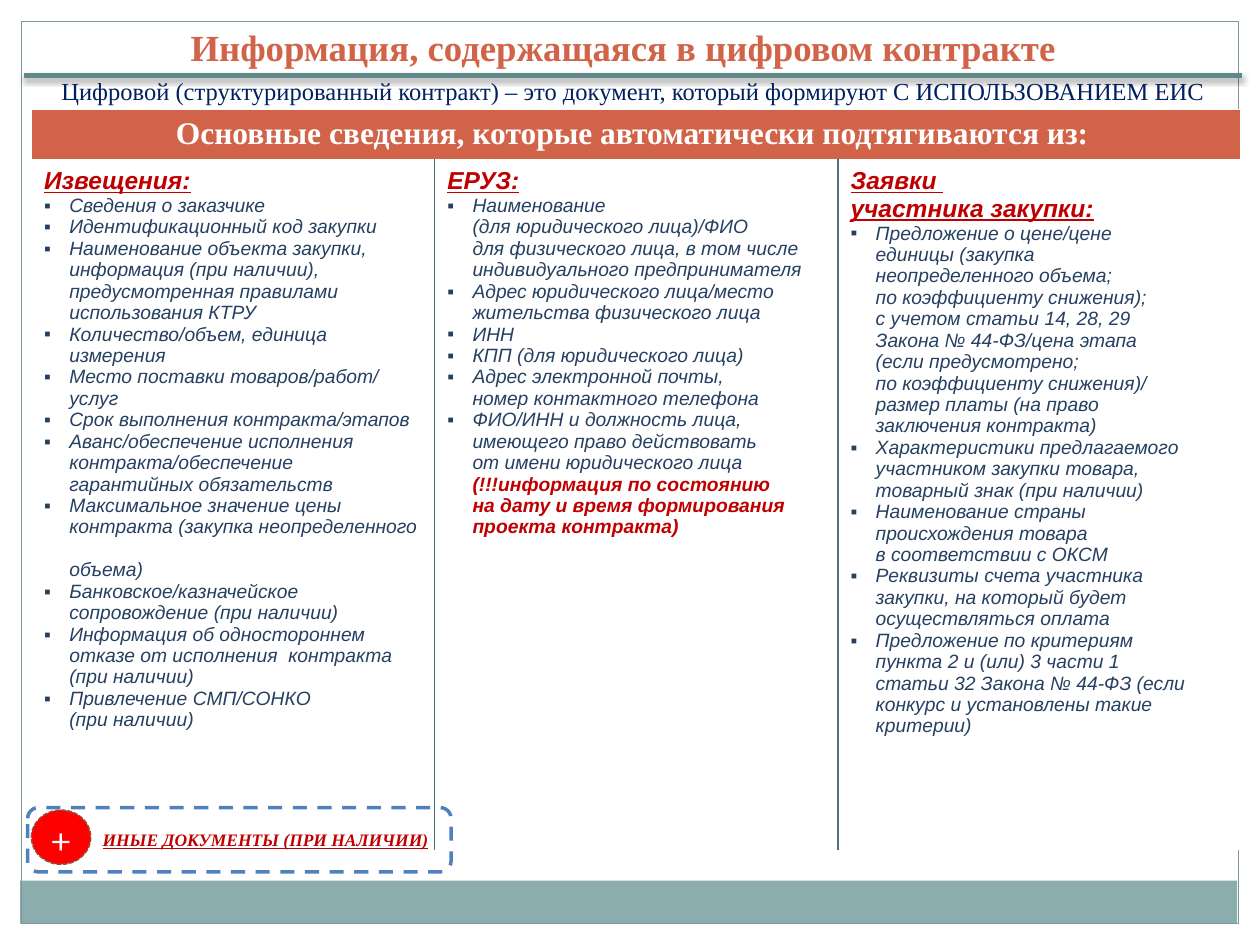
from copy import deepcopy
from lxml.etree import SubElement
from pptx import Presentation
from pptx.dml.color import RGBColor
from pptx.enum.dml import MSO_LINE
from pptx.enum.shapes import MSO_CONNECTOR, MSO_SHAPE
from pptx.enum.text import MSO_ANCHOR, PP_ALIGN
from pptx.oxml import parse_xml
from pptx.oxml.ns import nsdecls, qn
from pptx.util import Inches, Pt

THEME = {
    "white": "FFFFFF", "rust": "D16349", "sage": "8CADAE", "frame": "7C999A",
    "rule": "61898A", "grid": "546D7A", "red": "FF0000", "rim": "9B4936", "dash": "4F81BD",
    "title": ("D16349", {"name": "Times New Roman", "size": Pt(21), "bold": True}),
    "lead": ("002060", {"name": "Times New Roman", "size": Pt(14)}),
    "band": ("FFFFFF", {"name": "Times New Roman", "size": Pt(18), "bold": True}),
    "head": ("C00000", {"name": "Arial", "size": Pt(14), "bold": True, "italic": True, "underline": True}),
    "item": ("254061", {"name": "Arial", "size": Pt(11), "bold": False, "italic": True}),
    "alert": ("C00000", {"name": "Arial", "size": Pt(11), "bold": True, "italic": True}),
    "plus": ("FFFFFF", {"name": "Cambria", "size": Pt(24)}),
    "label": ("C00000", {"name": "Times New Roman", "size": Pt(10), "bold": True, "italic": True, "underline": True}),
}

COLUMNS = [
    ("Извещения:", [
        "Сведения о заказчике",
        "Идентификационный код закупки",
        "Наименование объекта закупки, \nинформация (при наличии), \nпредусмотренная правилами \nиспользования КТРУ",
        "Количество/объем, единица \nизмерения",
        "Место поставки товаров/работ/\nуслуг",
        "Срок выполнения контракта/этапов",
        "Аванс/обеспечение исполнения \nконтракта/обеспечение \nгарантийных обязательств",
        "Максимальное значение цены \nконтракта (закупка неопределенного \nобъема)",
        "Банковское/казначейское \nсопровождение (при наличии)",
        "Информация об одностороннем \nотказе от исполнения  контракта\n(при наличии)",
        "Привлечение СМП/СОНКО \n(при наличии)",
    ]),
    ("ЕРУЗ:", [
        "Наименование \n(для юридического лица)/ФИО \nдля физического лица, в том числе \nиндивидуального предпринимателя",
        "Адрес юридического лица/место \nжительства физического лица",
        "ИНН",
        "КПП (для юридического лица)",
        "Адрес электронной почты, \nномер контактного телефона",
        "ФИО/ИНН и должность лица, \nимеющего право действовать \nот имени юридического лица \n"
        "|(!!!информация по состоянию \nна дату и время формирования \nпроекта контракта)",
    ]),
    ("Заявки \nучастника закупки:", [
        "Предложение о цене/цене \nединицы (закупка \nнеопределенного объема; \nпо коэффициенту снижения); \n"
        "с учетом статьи 14, 28, 29 \nЗакона № 44-ФЗ/цена этапа\n(если предусмотрено; \n"
        "по коэффициенту снижения)/\nразмер платы (на право \nзаключения контракта)",
        "Характеристики предлагаемого \nучастником закупки товара, \nтоварный знак (при наличии)",
        "Наименование страны \nпроисхождения товара \nв соответствии с ОКСМ",
        "Реквизиты счета участника \nзакупки, на который будет \nосуществляться оплата",
        "Предложение по критериям \nпункта 2 и (или) 3 части 1 \nстатьи 32 Закона № 44-ФЗ (если \nконкурс и установлены такие \nкритерии)",
    ]),
]


def write(par, text, style):
    tone, form = THEME[style]
    for line in text.splitlines(keepends=True):
        run = par.add_run()
        run.text = line.rstrip("\n")
        for key, val in form.items():
            setattr(run.font, key, val)
        run.font.color.rgb = RGBColor.from_string(tone)
        if line.endswith("\n"):
            par.add_line_break()
            par._p[-1].append(deepcopy(run._r.rPr))


def draw(kind, box, fill=None, edge=None, width=1, dash=None):
    shape = slide.shapes.add_shape(kind, *map(Inches, box))
    shape.shadow.inherit = False
    if fill:
        shape.fill.solid()
        shape.fill.fore_color.rgb = RGBColor.from_string(THEME[fill])
    else:
        shape.fill.background()
    if edge:
        shape.line.color.rgb = RGBColor.from_string(THEME[edge])
        shape.line.width = Pt(width)
        shape.line.dash_style = dash
    else:
        shape.line.fill.background()
    return shape


deck = Presentation()
deck.slide_width, deck.slide_height = Inches(10), Inches(7.5)
slide = deck.slides.add_slide(deck.slide_layouts[6])

draw(MSO_SHAPE.RECTANGLE, (0.16, 6.99, 9.66, 0.34), "sage")
draw(MSO_SHAPE.RECTANGLE, (0.17, 0.17, 9.66, 7.16), None, "frame", 0.75)

rule = slide.shapes.add_connector(MSO_CONNECTOR.STRAIGHT, Inches(0.19), Inches(0.6), Inches(9.86), Inches(0.6))
rule.line.color.rgb = RGBColor.from_string(THEME["rule"])
rule.line.width = Pt(3)
rule._element.spPr.append(parse_xml(
    f'<a:effectLst {nsdecls("a")}><a:outerShdw blurRad="{Pt(3.1)}" dist="{Pt(1.6)}" dir="5400000" rotWithShape="0">'
    '<a:srgbClr val="000000"><a:alpha val="38000"/></a:srgbClr></a:outerShdw></a:effectLst>'))

texts = [
    ("title", (0.22, 0.13, 9.45, 0.47), MSO_ANCHOR.BOTTOM, 0.9, "Информация, содержащаяся в цифровом контракте"),
    ("lead", (0.25, 0.44, 9.55, 0.56), MSO_ANCHOR.MIDDLE, 1.0,
     "Цифровой (структурированный контракт) – это документ, который формируют С ИСПОЛЬЗОВАНИЕМ ЕИС"),
]
for style, box, anchor, space, text in texts:
    frame = slide.shapes.add_textbox(*map(Inches, box)).text_frame
    frame.word_wrap = True
    frame.vertical_anchor = anchor
    par = frame.paragraphs[0]
    par.alignment = PP_ALIGN.CENTER
    par.line_spacing = space
    write(par, text, style)

count = len(COLUMNS)
table = slide.shapes.add_table(2, count, Inches(0.25), Inches(0.87), Inches(9.6), Inches(5.87)).table
table.first_row = table.horz_banding = False
for row, high in zip(table.rows, (0.41, 5.46)):
    row.height = Inches(high)
table.cell(0, 0).merge(table.cell(0, count - 1))
par = table.cell(0, 0).text_frame.paragraphs[0]
par.alignment = PP_ALIGN.CENTER
write(par, "Основные сведения, которые автоматически подтягиваются из: ", "band")

for col, (head, items) in enumerate(COLUMNS):
    table.columns[col].width = Inches(3.2)
    frame = table.cell(1, col).text_frame
    write(frame.paragraphs[0], head, "head")
    for item in items:
        par = frame.add_paragraph()
        prop = par._p.get_or_add_pPr()
        prop.set("marL", str(Inches(0.2)))
        prop.set("indent", str(Inches(-0.2)))
        SubElement(prop, qn("a:buFont")).set("typeface", "Arial")
        SubElement(prop, qn("a:buChar")).set("char", "▪")
        plain, _, alert = item.partition("|")
        write(par, plain, "item")
        write(par, alert, "alert")
    for row, fill in enumerate(("rust", "white")):
        cell = table.cell(row, col)
        cell.fill.solid()
        cell.fill.fore_color.rgb = RGBColor.from_string(THEME[fill])
        edges = {
            "L": ("grid" if row and col else "white", 1),
            "R": ("grid" if row and col < count - 1 else "white", 1),
            "T": ("white", 1),
            "B": ("white", 1 if row else 3),
        }
        for spot, (side, (tone, width)) in enumerate(edges.items()):
            cell._tc.get_or_add_tcPr().insert(spot, parse_xml(
                f'<a:ln{side} {nsdecls("a")} w="{Pt(width)}"><a:solidFill>'
                f'<a:srgbClr val="{THEME[tone]}"/></a:solidFill></a:ln{side}>'))

badge = draw(MSO_SHAPE.FLOWCHART_CONNECTOR, (0.25, 6.43, 0.47, 0.43), "red", "rim", 0.9, MSO_LINE.SQUARE_DOT)
extra = draw(MSO_SHAPE.ROUNDED_RECTANGLE, (0.22, 6.41, 3.36, 0.51), None, "dash", 2, MSO_LINE.DASH)
notes = [
    (badge, "+", "plus", PP_ALIGN.CENTER, 0),
    (extra, "ИНЫЕ ДОКУМЕНТЫ (ПРИ НАЛИЧИИ)", "label", PP_ALIGN.LEFT, 0.57),
]
for shape, text, style, align, inset in notes:
    frame = shape.text_frame
    form = {"margin_left": Inches(inset), "margin_right": 0, "margin_top": 0, "margin_bottom": 0,
            "vertical_anchor": MSO_ANCHOR.MIDDLE, "word_wrap": True}
    for key, val in form.items():
        setattr(frame, key, val)
    frame.paragraphs[0].alignment = align
    write(frame.paragraphs[0], text, style)

deck.save("out.pptx")
